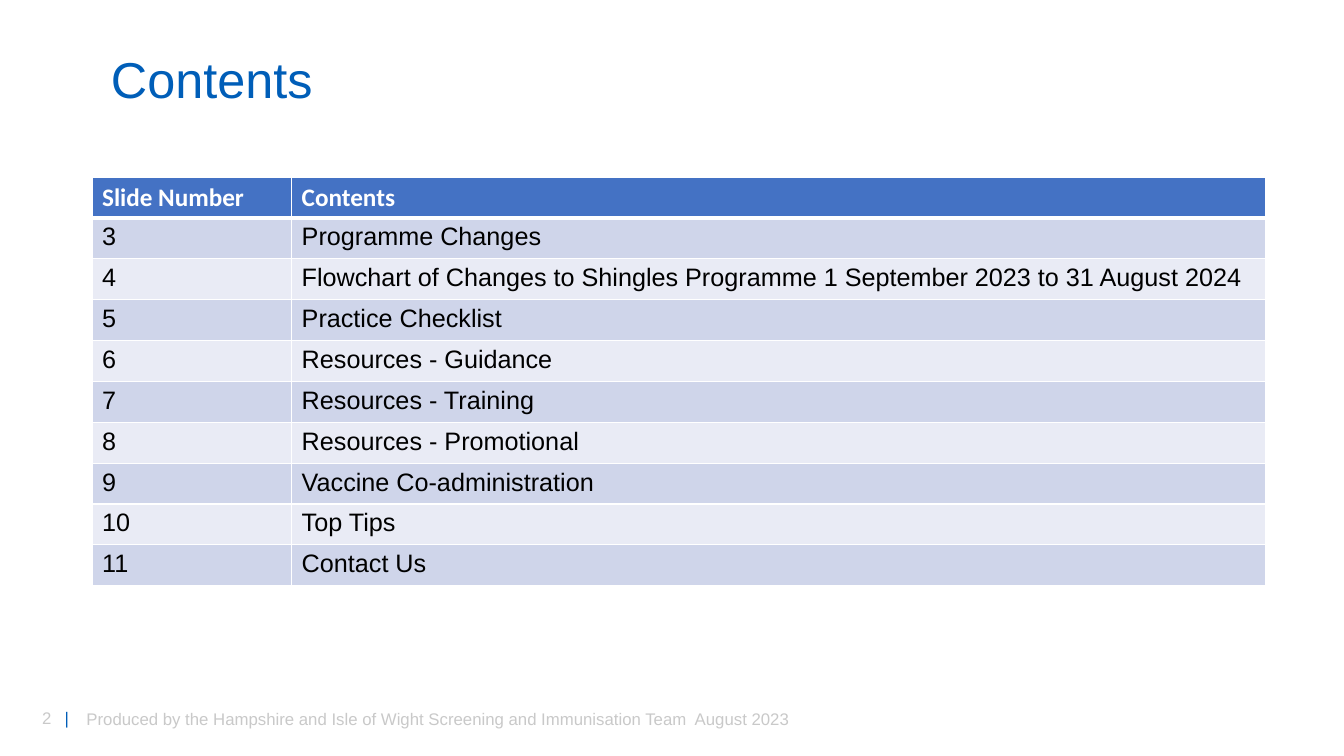
from dataclasses import dataclass

from lxml import etree
from pptx import Presentation
from pptx.dml.color import RGBColor
from pptx.enum import text
from pptx.oxml import ns
from pptx.util import Cm, Pt


@dataclass(frozen=True)
class Theme:
    blue: str = "005EB8"
    header: str = "4472C4"
    bands: tuple = ("CFD5EA", "E9EBF5")
    white: str = "FFFFFF"
    black: str = "000000"
    grey: str = "C9C9C9"
    body_font: str = "Arial"
    header_font: str = "Calibri"
    title_size: int = 36
    table_size: int = 18
    footer_size: int = 12


theme = Theme()


def set_font(font, size, color, name=theme.body_font, bold=False):
    font.name, font.size, font.bold = name, Pt(size), bold
    font.color.rgb = RGBColor.from_string(color)


def add_cell_borders(cell, bottom_width):
    """Draw white cell edges, 1 pt except for the bottom one; call before filling."""
    properties = cell._tc.get_or_add_tcPr()
    for edge, width in (("lnL", 1), ("lnR", 1), ("lnT", 1), ("lnB", bottom_width)):
        line = etree.SubElement(properties, ns.qn(f"a:{edge}"), w=str(Pt(width)))
        fill = etree.SubElement(line, ns.qn("a:solidFill"))
        etree.SubElement(fill, ns.qn("a:srgbClr"), val=theme.white)


deck = Presentation()
deck.slide_width, deck.slide_height = Cm(33.87), Cm(19.05)
slide = deck.slides.add_slide(deck.slide_layouts[5])

# Title
title = slide.shapes.title
title.left, title.top, title.width, title.height = Cm(2.54), Cm(1.24), Cm(25.4), Cm(1.68)
title.text_frame.text = "Contents"
title.text_frame.vertical_anchor = text.MSO_ANCHOR.MIDDLE
heading = title.text_frame.paragraphs[0]
heading.alignment = text.PP_ALIGN.LEFT
heading.line_spacing = 0.9
set_font(heading.font, theme.title_size, theme.blue)

# Contents table
FIRST_SLIDE = 3
topics = [
    "Programme Changes",
    "Flowchart of Changes to Shingles Programme 1 September 2023 to 31 August 2024",
    "Practice Checklist",
    "Resources - Guidance",
    "Resources - Training",
    "Resources - Promotional",
    "Vaccine Co-administration",
    "Top Tips",
    "Contact Us",
]
entries = [("Slide Number", "Contents")]
entries += [(str(number), topic) for number, topic in enumerate(topics, FIRST_SLIDE)]

row_height = 1.03
contents = slide.shapes.add_table(
    len(entries), 2, Cm(2.32), Cm(4.46), Cm(29.57), Cm(row_height * len(entries))
).table
contents.columns[0].width, contents.columns[1].width = Cm(5.03), Cm(24.54)

for row, entry in enumerate(entries):
    is_header = row == 0
    contents.rows[row].height = Cm(row_height)
    for column, wording in enumerate(entry):
        cell = contents.cell(row, column)
        add_cell_borders(cell, bottom_width=3 if is_header else 1)
        cell.fill.solid()
        band = theme.header if is_header else theme.bands[(row - 1) % 2]
        cell.fill.fore_color.rgb = RGBColor.from_string(band)
        cell.text = wording
        font = cell.text_frame.paragraphs[0].font
        if is_header:
            set_font(font, theme.table_size, theme.white, theme.header_font, bold=True)
        else:
            set_font(font, theme.table_size, theme.black)

# Footer: slide number with divider, then the credit
page_box = slide.shapes.add_textbox(Cm(0.81), Cm(17.7), Cm(1.8), Cm(0.76))
page_box.text_frame.word_wrap = True
page = page_box.text_frame.paragraphs[0]
tabs = etree.SubElement(page._p.get_or_add_pPr(), ns.qn("a:tabLst"))
etree.SubElement(tabs, ns.qn("a:tab"), pos=str(Cm(0.57)), algn="l")
for wording, color in (("2\t", theme.grey), ("|", theme.blue)):
    run = page.add_run()
    run.text = wording
    set_font(run.font, theme.footer_size, color)

credit_box = slide.shapes.add_textbox(Cm(1.93), Cm(17.6), Cm(18.8), Cm(1.02))
credit_box.text_frame.word_wrap = True
credit_box.text_frame.vertical_anchor = text.MSO_ANCHOR.MIDDLE
credit = credit_box.text_frame.paragraphs[0]
credit.text = "Produced by the Hampshire and Isle of Wight Screening and Immunisation Team  August 2023"
set_font(credit.font, theme.footer_size, theme.grey)

deck.save("out.pptx")
